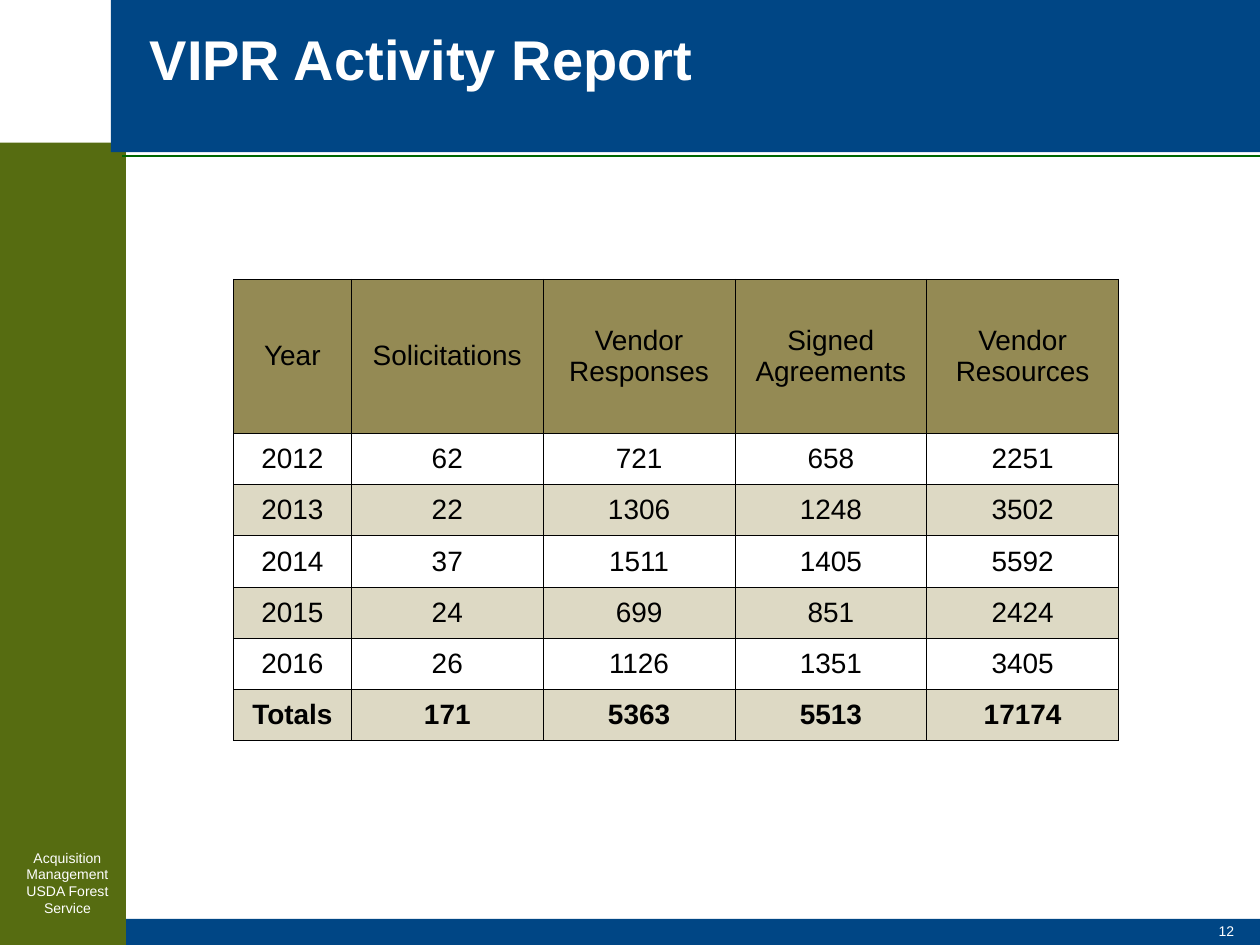
from pptx import Presentation
from pptx.dml.color import RGBColor
from pptx.enum.shapes import MSO_CONNECTOR as CONN, MSO_SHAPE as SHAPE
from pptx.enum.text import MSO_ANCHOR as ANCHOR, PP_ALIGN as ALIGN
from pptx.oxml.ns import qn
from pptx.util import Pt
from lxml.etree import SubElement

WHITE = RGBColor(0xFF, 0xFF, 0xFF)
BLACK = RGBColor(0x00, 0x00, 0x00)
BLUE = RGBColor(0x00, 0x46, 0x85)
OLIVE = RGBColor(0x56, 0x6C, 0x11)
GREEN = RGBColor(0x00, 0x66, 0x00)
KHAKI = RGBColor(0x94, 0x8A, 0x54)
SAND = RGBColor(0xDD, 0xD9, 0xC4)

ROWS = [
    ["Year", "Solicitations", "Vendor Responses", "Signed Agreements", "Vendor Resources"],
    ["2012", "62", "721", "658", "2251"],
    ["2013", "22", "1306", "1248", "3502"],
    ["2014", "37", "1511", "1405", "5592"],
    ["2015", "24", "699", "851", "2424"],
    ["2016", "26", "1126", "1351", "3405"],
    ["Totals", "171", "5363", "5513", "17174"],
]


class Report:
    """Draw styled elements on one slide, with lengths in points."""

    font = "Arial"

    def __init__(self, slide):
        self.shapes = slide.shapes

    def style(self, p, size, color, bold=False, align=ALIGN.LEFT):
        p.alignment = align
        p.font.name, p.font.size, p.font.bold = self.font, Pt(size), bold
        p.font.color.rgb = color

    def rect(self, x, y, w, h, color):
        sp = self.shapes.add_shape(SHAPE.RECTANGLE, Pt(x), Pt(y), Pt(w), Pt(h))
        sp.shadow.inherit = False
        sp.fill.solid()
        sp.fill.fore_color.rgb = color
        sp.line.fill.background()

    def line(self, x1, y1, x2, y2, color, width):
        cn = self.shapes.add_connector(CONN.STRAIGHT, Pt(x1), Pt(y1), Pt(x2), Pt(y2))
        cn.line.color.rgb = color
        cn.line.width = Pt(width)
        SubElement(cn._element.spPr, qn("a:effectLst"))

    def text(self, x, y, w, h, lines, size, bold=False, align=ALIGN.LEFT, spacing=1.0):
        tf = self.shapes.add_textbox(Pt(x), Pt(y), Pt(w), Pt(h)).text_frame
        tf.word_wrap = True
        tf.text = "\n".join(lines)
        for p in tf.paragraphs:
            p.line_spacing = spacing
            self.style(p, size, WHITE, bold, align)

    def border(self, cell, color, width):
        tcPr = cell._tc.get_or_add_tcPr()
        for i, side in enumerate(("lnL", "lnR", "lnT", "lnB")):
            ln = tcPr.makeelement(qn(f"a:{side}"), {"w": str(Pt(width))})
            fill = SubElement(ln, qn("a:solidFill"))
            SubElement(fill, qn("a:srgbClr"), val=str(color))
            tcPr.insert(i, ln)

    def table(self, x, y, widths, heights, rows):
        tb = self.shapes.add_table(len(rows), len(widths), Pt(x), Pt(y),
                                   Pt(sum(widths)), Pt(sum(heights))).table
        for col, w in zip(tb.columns, widths):
            col.width = Pt(w)
        for r, (row, h) in enumerate(zip(rows, heights)):
            tb.rows[r].height = Pt(h)
            for c, value in enumerate(row):
                cell = tb.cell(r, c)
                cell.text = value
                cell.vertical_anchor = ANCHOR.MIDDLE
                cell.margin_left = cell.margin_right = 0
                cell.margin_top = cell.margin_bottom = 0
                if r % 2:
                    cell.fill.background()
                else:
                    cell.fill.solid()
                    cell.fill.fore_color.rgb = SAND if r else KHAKI
                self.border(cell, BLACK, 0.5)
                self.style(cell.text_frame.paragraphs[0], 16, BLACK,
                           r == len(rows) - 1, ALIGN.CENTER)


def main():
    prs = Presentation()
    prs.slide_width, prs.slide_height = Pt(720), Pt(540)
    s = Report(prs.slides.add_slide(prs.slide_layouts[6]))
    s.rect(70, 525, 650, 15, BLUE)
    s.rect(0, 81.5, 72, 458.5, OLIVE)
    s.line(70, 89.2, 720, 89.2, GREEN, 0.75)
    s.rect(63.4, 0, 656.6, 87, BLUE)
    s.text(78.5, 13, 625, 78.5, ["VIPR Activity Report"], 32, bold=True, spacing=0.95)
    s.text(544.3, 523.4, 168, 17, ["12"], 8, align=ALIGN.RIGHT)
    s.text(5.8, 481.7, 65.5, 50, ["Acquisition Management", "USDA Forest Service"], 8,
           align=ALIGN.CENTER)
    s.table(133.4, 159.6, [67.4] + [109.6] * 4, [88] + [29.3] * 6, ROWS)
    prs.save("out.pptx")


if __name__ == "__main__":
    main()
